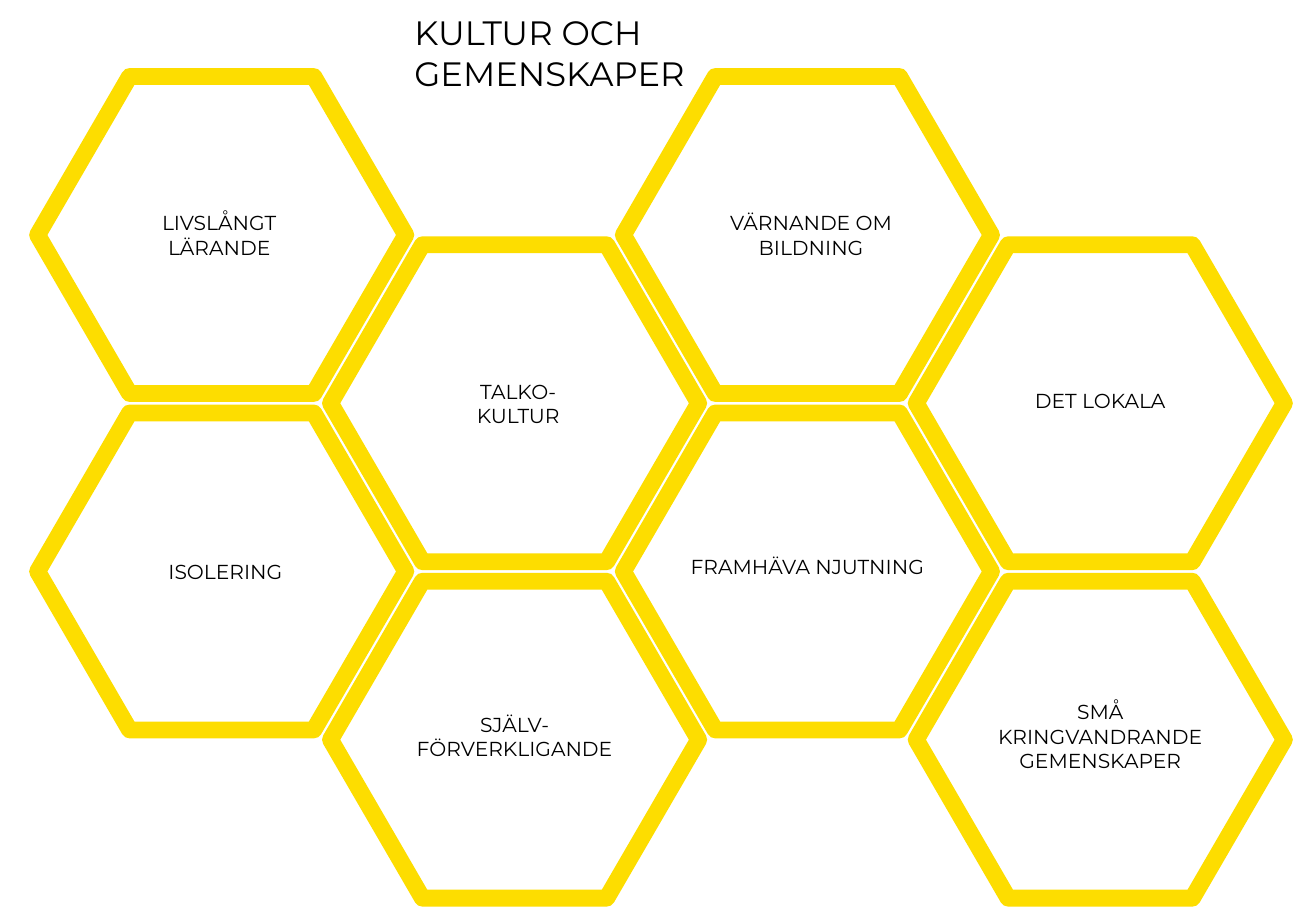
from lxml import etree
from pptx import Presentation
from pptx.dml.color import RGBColor
from pptx.enum.shapes import MSO_SHAPE
from pptx.enum.text import MSO_ANCHOR, MSO_AUTO_SIZE, PP_ALIGN
from pptx.oxml.ns import qn
from pptx.util import Inches, Pt

HEXAGON = MSO_SHAPE.HEXAGON
TOP, MIDDLE = MSO_ANCHOR.TOP, MSO_ANCHOR.MIDDLE
LEFT, CENTER = PP_ALIGN.LEFT, PP_ALIGN.CENTER
NO_AUTOSIZE = MSO_AUTO_SIZE.NONE

COLORS = {"background": "FFFFFF", "honey": "FDDD00", "text": "000000"}
FONT = "Montserrat"

CELL_WIDTH, CELL_HEIGHT = 3.03, 2.61
COLUMN_STEP, ROW_STEP = 2.41, 2.77
LABEL_WIDTH, LABEL_HEIGHT = 2.06, 0.61

# column, row, lines, label shift right and down
CELLS = [
    (0, 0, ["LIVSLÅNGT", "LÄRANDE"], -0.02, 0),
    (0, 1, ["ISOLERING"], 0.03, 0),
    (1, 0, ["TALKO-", "KULTUR"], 0.03, 0),
    (1, 1, ["SJÄLV-", "FÖRVERKLIGANDE"], 0, -0.03),
    (2, 0, ["VÄRNANDE OM", "BILDNING"], 0.03, 0),
    (2, 1, ["FRAMHÄVA NJUTNING"], 0, -0.04),
    (3, 0, ["DET LOKALA"], 0, -0.02),
    (3, 1, ["SMÅ", "KRINGVANDRANDE", "GEMENSKAPER"], 0, -0.03),
]


def color(name):
    return RGBColor.from_string(COLORS[name])


def place(shape, box):
    shape.left, shape.top, shape.width, shape.height = map(Inches, box)


def write_lines(shape, lines, size, align, anchor):
    frame = shape.text_frame
    frame.auto_size = NO_AUTOSIZE
    frame.word_wrap = True
    frame.vertical_anchor = anchor
    frame.margin_left = frame.margin_right = 0
    frame.margin_top = frame.margin_bottom = 0
    para = frame.paragraphs[0]
    para.alignment = align
    para.line_spacing = 1.0
    para.space_before = Pt(0)
    for index, line in enumerate(lines):
        if index:
            para.add_line_break()
        span = para.add_run()
        span.text = line
        span.font.name = FONT
        span.font.size = Pt(size)
        span.font.color.rgb = color("text")


def add_title(page, box):
    title = page.shapes.title
    place(title, box)
    write_lines(title, ["KULTUR OCH", "GEMENSKAPER"], 20, LEFT, TOP)


def add_cell(page, box, lines, shift_right, shift_down):
    left, top, width, height = box
    cell = page.shapes.add_shape(HEXAGON, *map(Inches, box))
    cell.adjustments[0] = 0.29
    cell.shadow.inherit = False
    cell.fill.background()
    cell.line.color.rgb = color("honey")
    cell.line.width = Pt(10)
    etree.SubElement(cell.line._get_or_add_ln(), qn("a:round"))

    label_box = (
        left + (width - LABEL_WIDTH) / 2 + shift_right,
        top + (height - LABEL_HEIGHT) / 2 + shift_down,
        LABEL_WIDTH,
        LABEL_HEIGHT,
    )
    label = page.shapes.add_textbox(*map(Inches, label_box))
    write_lines(label, lines, 12, CENTER, MIDDLE)


def add_honeycomb(page, left, top):
    for column, row, lines, shift_right, shift_down in CELLS:
        stagger = ROW_STEP / 2 * (column % 2)
        box = (
            left + column * COLUMN_STEP,
            top + row * ROW_STEP + stagger,
            CELL_WIDTH,
            CELL_HEIGHT,
        )
        add_cell(page, box, lines, shift_right, shift_down)


def main():
    deck = Presentation()
    deck.slide_width, deck.slide_height = Inches(10.83), Inches(7.5)
    page = deck.slides.add_slide(deck.slide_layouts[5])
    page.background.fill.solid()
    page.background.fill.fore_color.rgb = color("background")
    add_honeycomb(page, 0.31, 0.63)
    add_title(page, (3.41, 0.1, 4.02, 0.68))
    deck.save("out.pptx")


if __name__ == "__main__":
    main()
